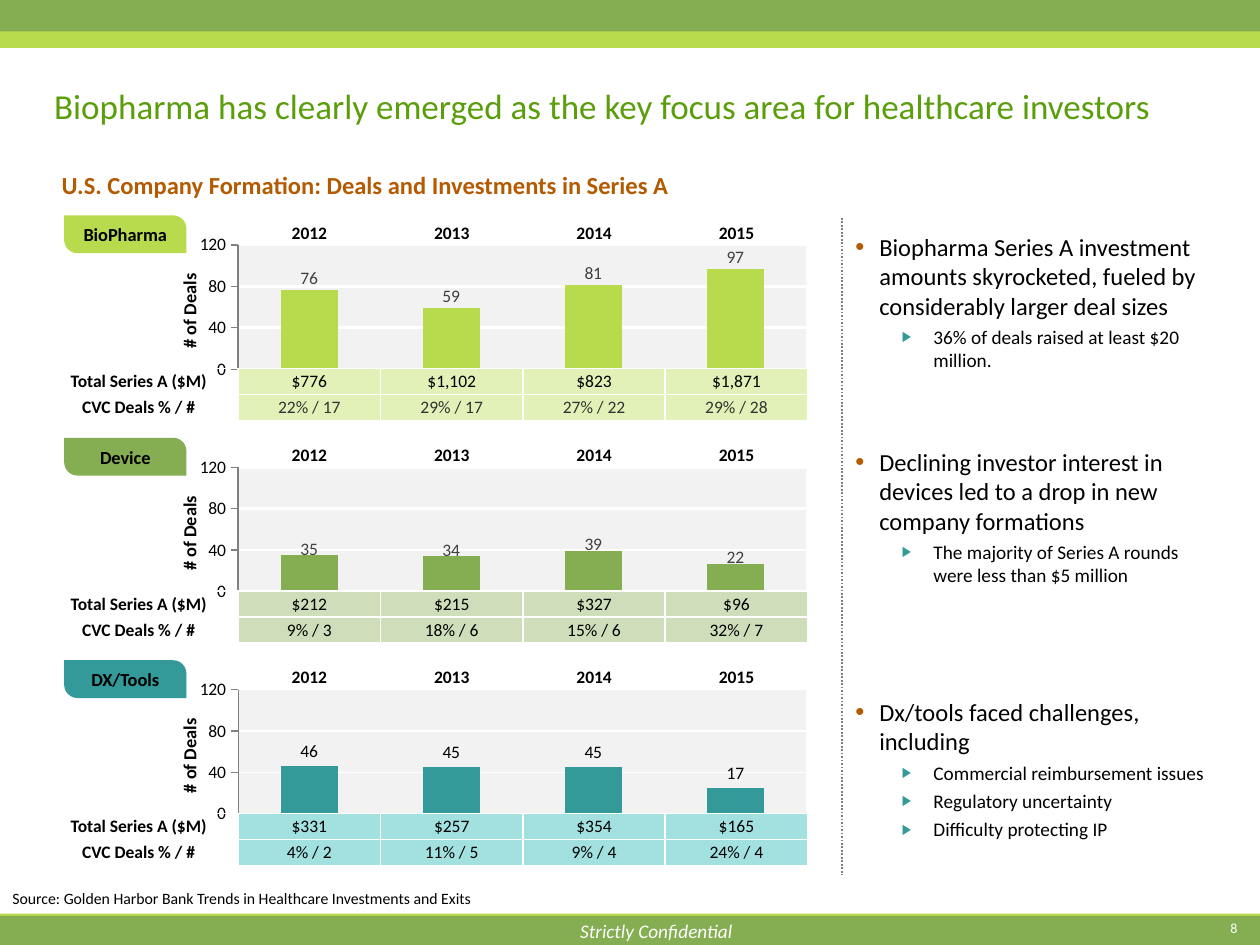
"""Build the slide on Series A deals by healthcare sector."""
import pptx
import pptx.chart.data
import pptx.dml.color
import pptx.enum.chart
import pptx.enum.dml
import pptx.enum.shapes
import pptx.enum.text
import pptx.oxml
import pptx.oxml.ns
import pptx.util

Inches, Pt, qn = pptx.util.Inches, pptx.util.Pt, pptx.oxml.ns.qn
ALIGN, ANCHOR = pptx.enum.text.PP_ALIGN, pptx.enum.text.MSO_ANCHOR
SHAPE = pptx.enum.shapes.MSO_SHAPE
XL = pptx.enum.chart

LIME, GREEN, TEAL, RUST, GREY = "B7DB4C", "85AD52", "339A99", "B45A00", "808080"
BLACK, WHITE = "000000", "FFFFFF"
FONT = "Calibri"
NO_STYLE = "{2D5ABB26-0587-4C30-8999-92F81FD0307C}"

TITLE = "Biopharma has clearly emerged as the key focus area for healthcare investors"
SUBTITLE = "U.S. Company Formation: Deals and Investments in Series A"
SOURCE = "Source: Golden Harbor Bank Trends in Healthcare Investments and Exits"
YEARS = ["2012", "2013", "2014", "2015"]
ROW_LABELS = ["Total Series A ($M)", "CVC Deals % / #"]

SECTORS = [
    dict(name="BioPharma", color=LIME, tint="E2F1B7", frame=(1.13, 1.77, 5.46, 1.3),
         deals=[76, 59, 81, 97], shown={}, label_color="404040", label_drop=0.02,
         grid=1.5, axis_shown=False, cvc_color="333333",
         rows=[["$776", "$1,102", "$823", "$1,871"],
               ["22% / 17", "29% / 17", "27% / 22", "29% / 28"]]),
    dict(name="Device", color=GREEN, tint="CEDEBA", frame=(1.31, 3.52, 5.27, 1.72),
         deals=[35, 34, 39, 27], shown={3: "22"}, label_color="404040", label_drop=0.04,
         grid=1.5, axis_shown=True, cvc_color=BLACK,
         rows=[["$212", "$215", "$327", "$96"],
               ["9% / 3", "18% / 6", "15% / 6", "32% / 7"]]),
    dict(name="DX/Tools", color=TEAL, tint="A3E1E0", frame=(1.25, 5.35, 5.32, 1.34),
         deals=[46, 45, 45, 25], shown={3: "17"}, label_color=BLACK, label_drop=0,
         grid=0.75, axis_shown=True, cvc_color=BLACK,
         rows=[["$331", "$257", "$354", "$165"],
               ["4% / 2", "11% / 5", "9% / 4", "24% / 4"]]),
]
COMMENTS = [
    (0, "Biopharma Series A investment amounts skyrocketed, fueled by "
        "considerably larger deal sizes",
     ["36% of deals raised at least $20 million."]),
    (43, "Declining investor interest in devices led to a drop in new company formations",
     ["The majority of Series A rounds were less than $5 million"]),
    (63, "Dx/tools faced challenges, including",
     ["Commercial reimbursement issues", "Regulatory uncertainty", "Difficulty protecting IP"]),
]
BULLETS = [dict(size=14, margin=0.19, hang=0.19, color=RUST, scale=105, char="•"),
           dict(size=11, margin=0.62, hang=0.25, color=TEAL, scale=75, char="▶")]
BANDS = [(0.13, 0.25, LIME), (0, 0.25, GREEN), (7.25, 0.25, LIME), (7.27, 0.23, GREEN)]

TOP, PITCH = 1.71, 1.765
LABEL_W, YEAR_W, GRID_X = 1.58, 1.13, 1.89
PLOT_DY, PLOT_W, PLOT_H, TABLE_DY = 0.235, 4.51, 0.985, 1.215


def rgb(color):
    return pptx.dml.color.RGBColor.from_string(color)


def box(*lengths):
    return [Inches(v) for v in lengths]


def style(font, color=BLACK, **values):
    for key, value in dict(name=FONT, **values).items():
        setattr(font, key, value)
    font.color.rgb = rgb(color)


def write(tf, text, size, color=BLACK, align=ALIGN.LEFT, anchor=ANCHOR.TOP, wrap=True, **values):
    tf.text = text
    tf.word_wrap, tf.vertical_anchor = wrap, anchor
    p = tf.paragraphs[0]
    p.alignment = align
    style(p.runs[0].font, color, size=Pt(size), **values)


def add_text(s, at, *args, **values):
    write(s.shapes.add_textbox(*box(*at)).text_frame, *args, **values)


def add_block(s, kind, at, color):
    sp = s.shapes.add_shape(kind, *box(*at))
    sp.shadow.inherit = False
    sp.fill.solid()
    sp.fill.fore_color.rgb = rgb(color)
    sp.line.fill.background()
    return sp


def xml(tag, inner="", attrs=""):
    prefix = tag.split(":")[0]
    return pptx.oxml.parse_xml(
        f"<{tag} {pptx.oxml.ns.nsdecls(prefix)} {attrs}>{inner}</{tag}>")


def set_layout(parent, index, **values):
    for old in parent.findall(qn("c:layout")):
        parent.remove(old)
    inner = "".join(f'<c:{k} val="{v}"/>' for k, v in values.items())
    parent.insert(index, xml("c:layout", f"<c:manualLayout>{inner}</c:manualLayout>"))


def add_deals_chart(s, sector, plot_top):
    left, top, width, height = sector["frame"]
    data = pptx.chart.data.CategoryChartData()
    data.categories = ["1", "2", "3", "4"]
    data.add_series("Series 1", sector["deals"])
    chart = s.shapes.add_chart(XL.XL_CHART_TYPE.COLUMN_CLUSTERED,
                               *box(left, top, width, height), data).chart
    chart.has_legend = chart.has_title = False
    style(chart.font, size=Pt(10))
    plot = chart.plots[0]
    plot.gap_width, plot.overlap, plot.vary_by_categories = 150, 100, False
    bars = plot.series[0]
    bars.format.fill.solid()
    bars.format.fill.fore_color.rgb = rgb(sector["color"])
    for i in range(len(YEARS)):
        label = bars.points[i].data_label
        if i in sector["shown"]:
            label.text_frame.text = sector["shown"][i]
            font = label.text_frame.paragraphs[0].runs[0].font
        else:
            font = label.font
        style(font, sector["label_color"], size=Pt(10))
        label.position = XL.XL_LABEL_POSITION.OUTSIDE_END
    if sector["label_drop"]:
        for label in chart._chartSpace.xpath(".//c:dLbl"):
            set_layout(label, 1, x=0, y=sector["label_drop"])

    cat, val = chart.category_axis, chart.value_axis
    cat.visible = sector["axis_shown"]
    cat.tick_label_position = XL.XL_TICK_LABEL_POSITION.NONE
    cat.major_tick_mark = XL.XL_TICK_MARK.NONE
    val.minimum_scale, val.maximum_scale, val.major_unit = 0, 120, 40
    val.major_tick_mark = XL.XL_TICK_MARK.OUTSIDE
    style(val.tick_labels.font, size=Pt(10))
    for line, color, weight in [(cat.format.line, GREY, 0.75), (val.format.line, GREY, 0.75),
                                (val.major_gridlines.format.line, WHITE, sector["grid"])]:
        line.color.rgb, line.width = rgb(color), Pt(weight)
    tf = val.axis_title.text_frame
    tf.text = "# of Deals"
    style(tf.paragraphs[0].runs[0].font, size=Pt(10.5), bold=True)
    tf._txBody.bodyPr.set("rot", "-5400000")
    tf._txBody.bodyPr.set("vert", "horz")
    set_layout(val.axis_title._element, 1, xMode="edge", yMode="edge",
               x=(1.38 - left) / width, y=(plot_top + 0.2 - top) / height)
    area = chart._chartSpace.chart.plotArea
    set_layout(area, 0, layoutTarget="inner", xMode="edge", yMode="edge",
               x=(GRID_X - left) / width, y=(plot_top - top) / height,
               w=PLOT_W / width, h=PLOT_H / height)
    area.append(xml("c:spPr", f'<a:solidFill {pptx.oxml.ns.nsdecls("a")}>'
                              '<a:srgbClr val="F2F2F2"/></a:solidFill>'))


def add_grid(s, x, y, widths, row_h, rows, tint=None, cvc_color=BLACK):
    t = s.shapes.add_table(len(rows), len(widths),
                           *box(x, y, sum(widths), row_h * len(rows))).table
    t._tbl.tblPr.find(qn("a:tableStyleId")).text = NO_STYLE
    t.first_row = t.horz_banding = False
    for col, width in zip(t.columns, widths):
        col.width = Inches(width)
    for i, row in enumerate(rows):
        t.rows[i].height = Inches(row_h)
        for j, text in enumerate(row):
            cell = t.cell(i, j)
            value = bool(tint) and j > 0
            write(cell.text_frame, text, 10, cvc_color if value and i else BLACK,
                  ALIGN.CENTER, bold=not value)
            cell.vertical_anchor = ANCHOR.MIDDLE
            cell.margin_top = cell.margin_bottom = Inches(0.02)
            if tint:
                for side in ("lnL", "lnR", "lnT", "lnB"):
                    cell._tc.get_or_add_tcPr().append(xml(
                        f"a:{side}", f'<a:solidFill><a:srgbClr val="{WHITE}"/></a:solidFill>',
                        'w="12700"'))
            if value:
                cell.fill.solid()
                cell.fill.fore_color.rgb = rgb(tint)
            else:
                cell.fill.background()


def add_comment(p, text, level, before):
    b = BULLETS[level]
    pPr = p._p.get_or_add_pPr()
    pPr.set("marL", str(Inches(b["margin"])))
    pPr.set("indent", str(-Inches(b["hang"])))
    p.level, p.space_before = level, Pt(before)
    pPr.append(xml("a:buClr", f'<a:srgbClr val="{b["color"]}"/>'))
    pPr.append(xml("a:buSzPct", attrs=f'val="{b["scale"] * 1000}"'))
    pPr.append(xml("a:buFont", attrs='typeface="Arial"'))
    pPr.append(xml("a:buChar", attrs=f'char="{b["char"]}"'))
    r = p.add_run()
    r.text = text
    style(r.font, size=Pt(b["size"]))


def main():
    prs = pptx.Presentation()
    prs.slide_width, prs.slide_height = box(10, 7.5)
    s = prs.slides.add_slide(prs.slide_layouts[5])
    for y, h, color in BANDS:
        add_block(s, SHAPE.RECTANGLE, (0, y, 10, h), color)
    title = s.shapes.title
    title.left, title.top, title.width, title.height = box(0.33, 0.42, 9, 0.83)
    write(title.text_frame, TITLE, 20, "5A9E0C", anchor=ANCHOR.MIDDLE)
    add_text(s, (0.39, 1.3, 5.44, 0.34), SUBTITLE, 14, RUST, bold=True)
    add_text(s, (0, 6.58, 9.25, 0.67), SOURCE, 9, anchor=ANCHOR.BOTTOM)
    add_text(s, (4.5, 7.25, 1.42, 0.29), "Strictly Confidential", 11, WHITE,
             ALIGN.CENTER, wrap=False, italic=True)
    add_text(s, (9.17, 7.25, 0.75, 0.33), "8", 8, WHITE, ALIGN.RIGHT)

    for i, sector in enumerate(SECTORS):
        top = TOP + i * PITCH
        add_deals_chart(s, sector, top + PLOT_DY)
        add_grid(s, GRID_X, top, [YEAR_W] * 4, 0.28, [YEARS])
        rows = [[label] + row for label, row in zip(ROW_LABELS, sector["rows"])]
        add_grid(s, GRID_X - LABEL_W, top + TABLE_DY, [LABEL_W] + [YEAR_W] * 4, 0.2, rows,
                 sector["tint"], sector["cvc_color"])
        badge = add_block(s, SHAPE.ROUND_2_DIAG_RECTANGLE, (0.51, top, 0.97, 0.3),
                          sector["color"])
        badge.adjustments[0], badge.adjustments[1] = 0, 0.35
        write(badge.text_frame, sector["name"], 10.5, align=ALIGN.CENTER,
              anchor=ANCHOR.MIDDLE, bold=True)

    line = s.shapes.add_connector(pptx.enum.shapes.MSO_CONNECTOR.STRAIGHT,
                                  *box(6.68, 1.73, 6.68, 6.94))
    line.line.color.rgb, line.line.width = rgb(GREY), Pt(1)
    line.line.dash_style = pptx.enum.dml.MSO_LINE.ROUND_DOT
    line._element.spPr.append(xml("a:effectLst"))

    tf = s.shapes.add_textbox(*box(6.69, 1.79, 3.07, 5.32)).text_frame
    tf.word_wrap = True
    for i, (gap, point, details) in enumerate(COMMENTS):
        add_comment(tf.add_paragraph() if i else tf.paragraphs[0], point, 0, gap)
        for detail in details:
            add_comment(tf.add_paragraph(), detail, 1, 3)
    prs.save("out.pptx")


if __name__ == "__main__":
    main()
